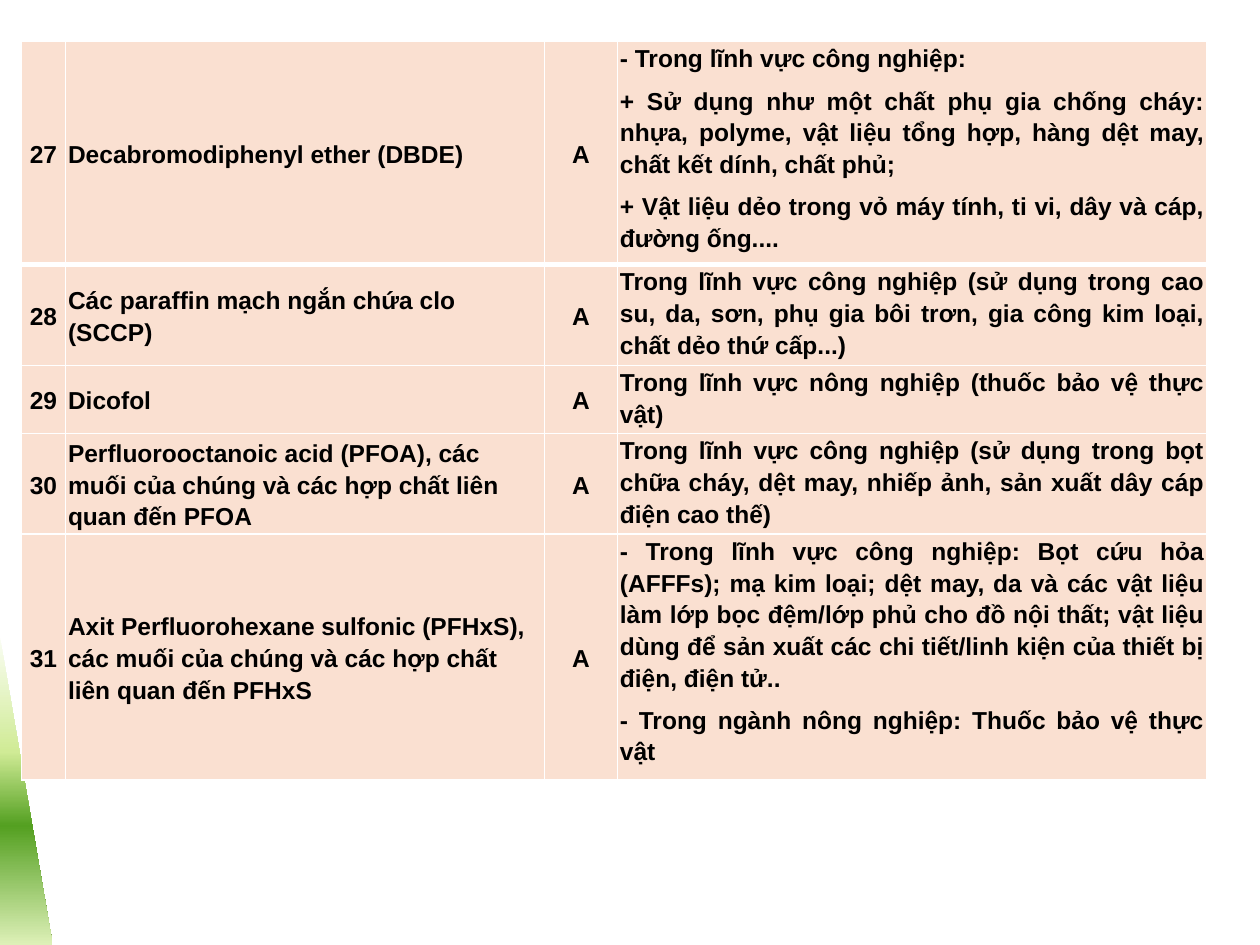
from dataclasses import dataclass

from lxml import etree
from pptx import Presentation
from pptx.dml.color import RGBColor
from pptx.enum.shapes import MSO_SHAPE
from pptx.enum.text import MSO_ANCHOR, PP_ALIGN
from pptx.oxml import parse_xml
from pptx.oxml.ns import qn
from pptx.util import Inches, Pt

TRIANGLE = MSO_SHAPE.RIGHT_TRIANGLE
MIDDLE, TOP = MSO_ANCHOR.MIDDLE, MSO_ANCHOR.TOP
LEFT, CENTER, JUSTIFY = PP_ALIGN.LEFT, PP_ALIGN.CENTER, PP_ALIGN.JUSTIFY
DML = "http://schemas.openxmlformats.org/drawingml/2006/main"


@dataclass(frozen=True)
class Theme:
    cell: str = "FAE0D1"
    border: str = "FFFFFF"
    text: str = "000000"
    font: str = "Arial"
    size: int = 14
    thin: int = 1
    thick: int = 3
    gradient: tuple = ((0, "FAFDF3"), (37, "D0EB96"), (61, "54A021"), (100, "DFF1B9"))


THEME = Theme()
PARA_FORMAT = {"line_spacing": 1.15, "space_after": Pt(6)}
FONT_FORMAT = {"name": THEME.font, "size": Pt(THEME.size), "bold": True}
MARGINS = {"margin_left": Inches(0.02), "margin_right": Inches(0.02),
           "margin_top": 0, "margin_bottom": 0}

# Width, alignment and anchor of the columns: number, substance, annex, use
COLUMNS = [(0.35, CENTER, MIDDLE), (3.8, LEFT, MIDDLE),
           (0.58, CENTER, MIDDLE), (4.68, JUSTIFY, TOP)]
ROW_HEIGHTS = [1.77, 0.8, 0.54, 0.8, 1.95]
FIRST_NUMBER = 27
ANNEX = "A"
SUBSTANCES = [
    ("Decabromodiphenyl ether (DBDE)",
     ["- Trong lĩnh vực công nghiệp:",
      "+ Sử dụng như một chất phụ gia chống cháy: nhựa, polyme, vật liệu tổng hợp, "
      "hàng dệt may, chất kết dính, chất phủ;",
      "+ Vật liệu dẻo trong vỏ máy tính, ti vi, dây và cáp, đường ống...."]),
    ("Các paraffin mạch ngắn chứa clo (SCCP)",
     ["Trong lĩnh vực công nghiệp (sử dụng trong cao su, da, sơn, phụ gia bôi trơn, "
      "gia công kim loại, chất dẻo thứ cấp...)"]),
    ("Dicofol",
     ["Trong lĩnh vực nông nghiệp (thuốc bảo vệ thực vật)"]),
    ("Perfluorooctanoic acid (PFOA), các muối của chúng và các hợp chất liên quan đến PFOA",
     ["Trong lĩnh vực công nghiệp (sử dụng trong bọt chữa cháy, dệt may, nhiếp ảnh, "
      "sản xuất dây cáp điện cao thế)"]),
    ("Axit Perfluorohexane sulfonic (PFHxS), các muối của chúng và các hợp chất "
     "liên quan đến PFHxS",
     ["- Trong lĩnh vực công nghiệp: Bọt cứu hỏa (AFFFs); mạ kim loại; dệt may, da và "
      "các vật liệu làm lớp bọc đệm/lớp phủ cho đồ nội thất; vật liệu dùng để sản xuất "
      "các chi tiết/linh kiện của thiết bị điện, điện tử..",
      "- Trong ngành nông nghiệp: Thuốc bảo vệ thực vật"]),
]


def apply_format(target, values):
    for name, value in values.items():
        setattr(target, name, value)


def add_corner_triangle(slide, x, y, w, h):
    sp = slide.shapes.add_shape(TRIANGLE, Inches(x), Inches(y), Inches(w), Inches(h))
    sp.shadow.inherit = False
    sp.line.fill.background()
    # Vertical gradient with four stops
    stops = "".join(f'<a:gs pos="{pos * 1000}"><a:srgbClr val="{color}"/></a:gs>'
                    for pos, color in THEME.gradient)
    gradient = parse_xml(f'<a:gradFill xmlns:a="{DML}"><a:gsLst>{stops}</a:gsLst>'
                         '<a:lin ang="5400000" scaled="0"/></a:gradFill>')
    sp.fill.solid()
    solid = sp.element.spPr.find(qn("a:solidFill"))
    solid.getparent().replace(solid, gradient)


def set_borders(cell, row):
    tc_pr = cell._tc.get_or_add_tcPr()
    # The first row is set off by a thick rule
    widths = {"L": THEME.thin, "R": THEME.thin,
              "T": THEME.thick if row == 1 else THEME.thin,
              "B": THEME.thick if row == 0 else THEME.thin}
    for side, width in widths.items():
        ln = etree.SubElement(tc_pr, qn(f"a:ln{side}"), w=str(Pt(width)))
        fill = etree.SubElement(ln, qn("a:solidFill"))
        etree.SubElement(fill, qn("a:srgbClr"), val=THEME.border)


def fill_cell(cell, lines, align, anchor):
    apply_format(cell, MARGINS)
    cell.vertical_anchor = anchor
    cell.fill.solid()
    cell.fill.fore_color.rgb = RGBColor.from_string(THEME.cell)
    tf = cell.text_frame
    for i, line in enumerate(lines):
        p = tf.add_paragraph() if i else tf.paragraphs[0]
        p.alignment = align
        apply_format(p, PARA_FORMAT)
        r = p.add_run()
        r.text = line
        apply_format(r.font, FONT_FORMAT)
        r.font.color.rgb = RGBColor.from_string(THEME.text)


def add_substance_table(slide, x, y, w, h):
    frame = slide.shapes.add_table(len(SUBSTANCES), len(COLUMNS),
                                   Inches(x), Inches(y), Inches(w), Inches(h))
    table = frame.table
    table.first_row = table.horz_banding = False
    for column, (width, _, _) in zip(table.columns, COLUMNS):
        column.width = Inches(width)
    for row, height in zip(table.rows, ROW_HEIGHTS):
        row.height = Inches(height)
    for i, (substance, uses) in enumerate(SUBSTANCES):
        contents = [[str(FIRST_NUMBER + i)], [substance], [ANNEX], uses]
        for j, (lines, (_, align, anchor)) in enumerate(zip(contents, COLUMNS)):
            cell = table.cell(i, j)
            set_borders(cell, i)
            fill_cell(cell, lines, align, anchor)


def main():
    prs = Presentation()
    prs.slide_width, prs.slide_height = Inches(10), Inches(7.5)
    slide = prs.slides.add_slide(prs.slide_layouts[6])
    # Corner decoration
    add_corner_triangle(slide, 0, 5.06, 0.42, 2.45)
    # Table of substances
    add_substance_table(slide, 0.17, 0.33, sum(c[0] for c in COLUMNS), sum(ROW_HEIGHTS))
    prs.save("out.pptx")


if __name__ == "__main__":
    main()
